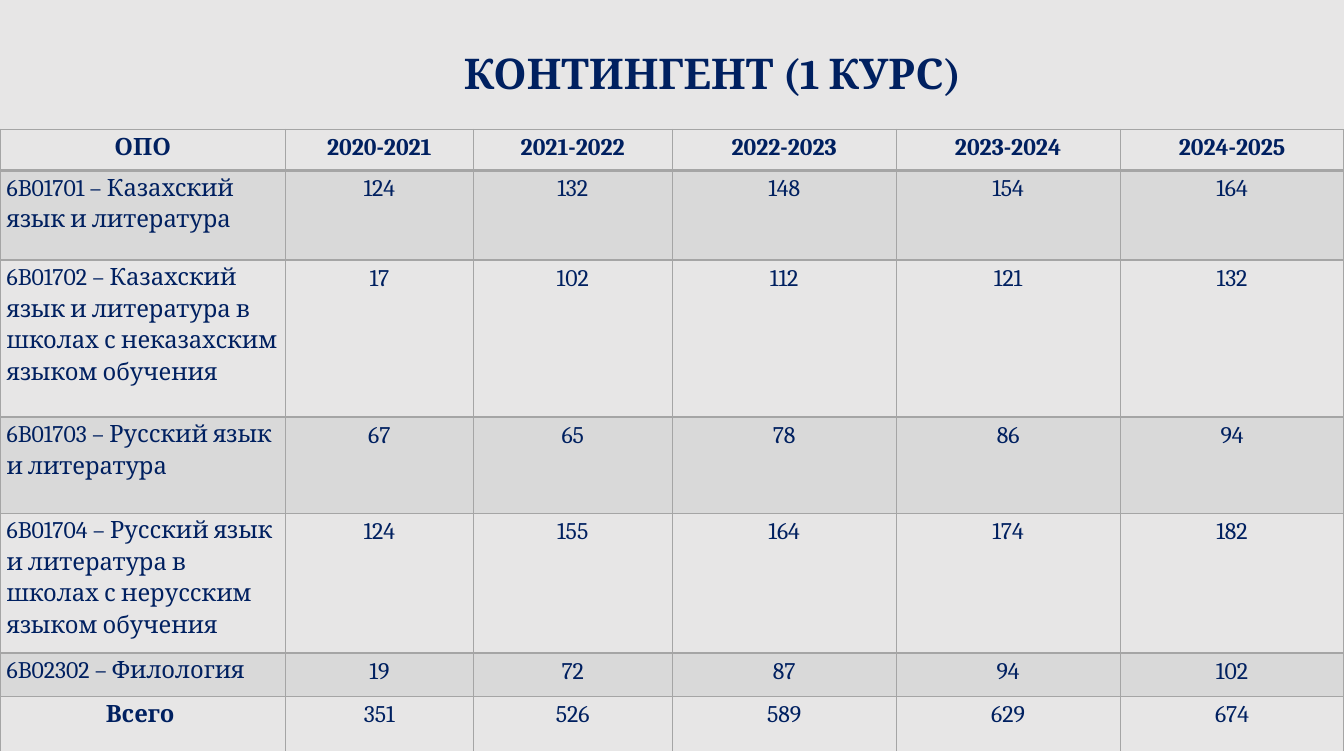
from lxml import etree
from pptx import Presentation
from pptx import util as u
from pptx.dml.color import RGBColor
from pptx.enum import text
from pptx.oxml.ns import qn

NAVY, GREY, PAPER = "002060", "A5A5A5", "E7E6E6"
FONT = "Cambria"
COLS = [216, 142, 150.5] + [169.4] * 3
ROWS = [31, 67.7, 118.8, 72.7, 105.8, 33.1, 41.8]
DATA = [
    ("ОПО", "2020-2021", "2021-2022", "2022-2023", "2023-2024", "2024-2025"),
    ("6B01701 – Казахский язык и литература", 124, 132, 148, 154, 164),
    ("6B01702 – Казахский язык и литература в школах с неказахским языком обучения",
     17, 102, 112, 121, 132),
    ("6B01703 – Русский язык и литература", 67, 65, 78, 86, 94),
    ("6B01704 – Русский язык и литература в школах с нерусским языком обучения",
     124, 155, 164, 174, 182),
    ("6B02302 – Филология", 19, 72, 87, 94, 102),
    ("Всего ", 351, 526, 589, 629, 674),
]


def rgb(color):
    """Turn a hex string into a colour."""
    return RGBColor.from_string(color)


def write(p, words, size, bold, align=text.PP_ALIGN.CENTER):
    """Add one run to a paragraph."""
    p.alignment = align
    r = p.add_run()
    r.text = words
    r.font.name, r.font.size, r.font.bold = FONT, u.Pt(size), bold
    r.font.color.rgb = rgb(NAVY)


def shade(cell, alpha):
    """Fill a cell with translucent grey."""
    cell.fill.solid()
    cell.fill.fore_color.rgb = rgb(GREY)
    clr = cell._tc.tcPr.find(".//" + qn("a:srgbClr"))
    etree.SubElement(clr, qn("a:alpha"), val=str(alpha * 1000))


def border(cell, bottom):
    """Draw grey lines on all four sides of a cell."""
    tc_pr = cell._tc.get_or_add_tcPr()
    for i, (side, width) in enumerate(zip("LRTB", (1, 1, 1, bottom))):
        ln = etree.Element(qn("a:ln" + side), w=str(u.Pt(width)))
        fill = etree.SubElement(ln, qn("a:solidFill"))
        etree.SubElement(fill, qn("a:srgbClr"), val=GREY)
        tc_pr.insert(i, ln)


def title(s, x, y, w, h):
    """Place the centred heading."""
    tf = s.shapes.add_textbox(u.Pt(x), u.Pt(y), u.Pt(w), u.Pt(h)).text_frame
    tf.word_wrap = True
    write(tf.paragraphs[0], "КОНТИНГЕНТ (1 КУРС)", 32, True)


def enrolment_table(s, x, y):
    """Place the table of first-year students by programme and year."""
    tbl = s.shapes.add_table(len(ROWS), len(COLS), u.Pt(x), u.Pt(y),
                             u.Pt(sum(COLS)), u.Pt(sum(ROWS))).table
    tbl.first_row = tbl.horz_banding = False
    for col, w in zip(tbl.columns, COLS):
        col.width = u.Pt(w)
    for row, h in zip(tbl.rows, ROWS):
        row.height = u.Pt(h)
    last = len(ROWS) - 1
    for i, values in enumerate(DATA):
        for j, value in enumerate(values):
            cell = tbl.cell(i, j)
            p = cell.text_frame.paragraphs[0]
            bold = i == 0 or (i == last and j == 0)
            if j == 0 and 0 < i < last:
                cell.margin_left = cell.margin_right = u.Pt(5)
                cell.margin_top = cell.margin_bottom = 0
                p.line_spacing = 1.15
                write(p, value, 18, bold, text.PP_ALIGN.LEFT)
            else:
                write(p, str(value), 18, bold)
            if i % 2:
                shade(cell, 20)
            else:
                cell.fill.background()
            border(cell, 1 if i else 2)


def main():
    """Build and save the slide."""
    prs = Presentation()
    prs.slide_width, prs.slide_height = u.Pt(1016.64), u.Pt(568.08)
    s = prs.slides.add_slide(prs.slide_layouts[6])
    s.background.fill.solid()
    s.background.fill.fore_color.rgb = rgb(PAPER)
    enrolment_table(s, 0, 98)
    title(s, 146, 32.4, 786, 46)
    prs.save("out.pptx")


if __name__ == "__main__":
    main()
